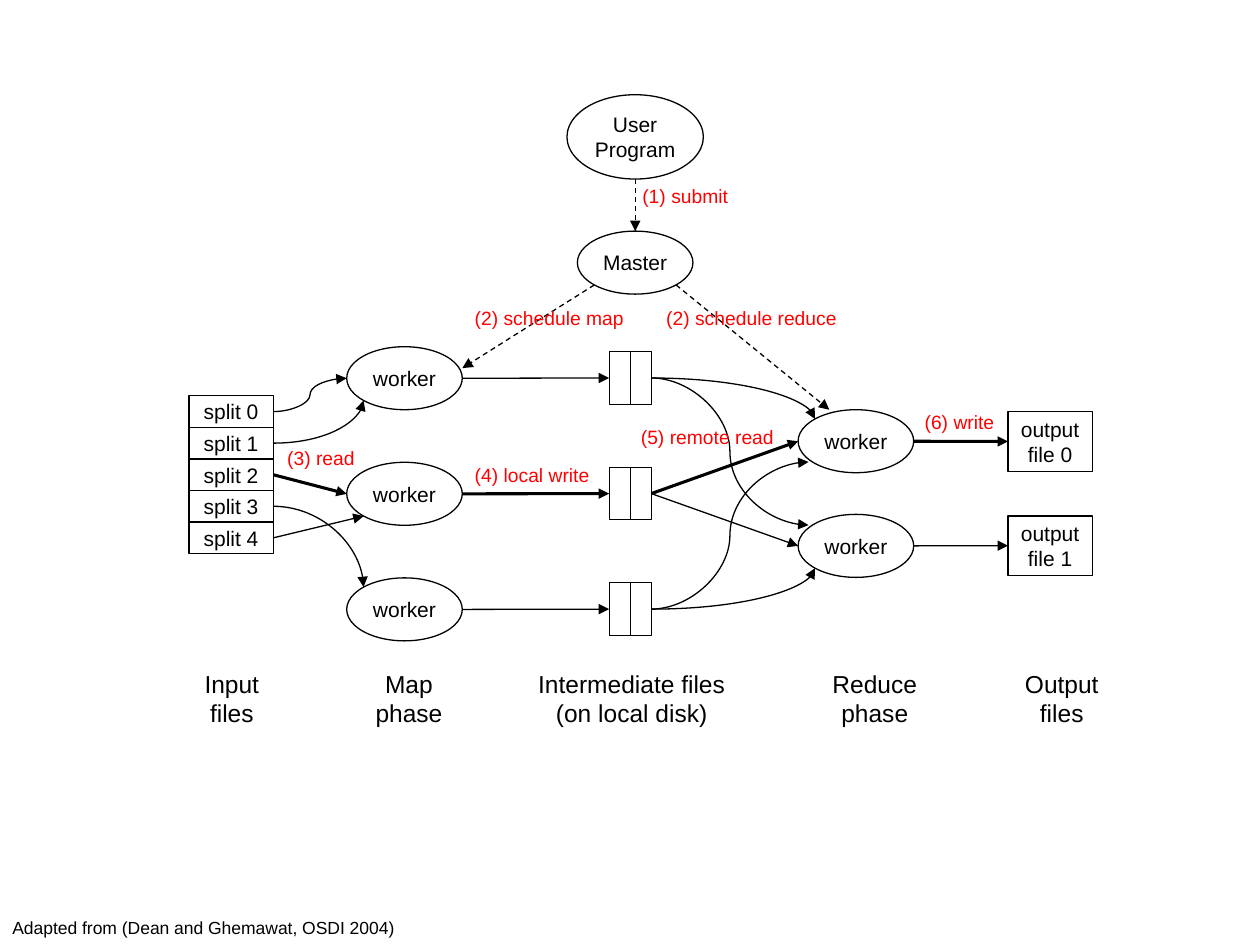
from pptx import Presentation
from pptx.dml.color import RGBColor
from pptx.enum.dml import MSO_LINE
from pptx.enum.shapes import MSO_CONNECTOR, MSO_SHAPE
from pptx.enum.text import MSO_ANCHOR, MSO_AUTO_SIZE, PP_ALIGN
from pptx.oxml.ns import qn
from pptx.util import Cm, Pt
from lxml.etree import SubElement

INK = {"black": "000000", "red": "FF0000"}
OVAL, RECT = MSO_SHAPE.OVAL, MSO_SHAPE.RECTANGLE
SITES = {"top": 0, "left": 1, "bottom": 2, "right": 3}
SPOTS = {
    "top": (0.5, 0), "left": (0, 0.5), "bottom": (0.5, 1), "right": (1, 0.5),
    "top left": (0.146, 0.146), "low left": (0.146, 0.854),
    "low right": (0.854, 0.854), "upper side": (0.09, 0.17),
    "lower side": (0.09, 0.83), "upper right": (1, 0.34), "near top": (0.27, 0),
}


def color(name):
    return RGBColor.from_string(INK[name])


def write(frame, text, size, ink="black", align=PP_ALIGN.CENTER):
    frame.text = text
    for par in frame.paragraphs:
        par.alignment = align
        par.font.name = "Arial"
        par.font.size = Pt(size)
        par.font.color.rgb = color(ink)


def node(slide, kind, box, text=""):
    shape = slide.shapes.add_shape(kind, *map(Cm, box))
    shape.shadow.inherit = False
    shape.fill.background()
    shape.line.color.rgb = color("black")
    shape.line.width = Pt(0.75)
    if text:
        frame = shape.text_frame
        frame.margin_left = frame.margin_right = 0
        frame.margin_top = frame.margin_bottom = 0
        frame.vertical_anchor = MSO_ANCHOR.MIDDLE
        frame.word_wrap = False
        write(frame, text, 12)
    return shape


def label(slide, box, text, size, ink="black", align=PP_ALIGN.LEFT, wrap=False):
    frame = slide.shapes.add_textbox(*map(Cm, box)).text_frame
    frame.word_wrap = wrap
    frame.auto_size = MSO_AUTO_SIZE.SHAPE_TO_FIT_TEXT
    write(frame, text, size, ink, align)


def point(shape, spot):
    across, down = SPOTS[spot]
    return (int(shape.left + across * shape.width),
            int(shape.top + down * shape.height))


def link(slide, start, end, width=0.75, curve=0, dash=False):
    kind = MSO_CONNECTOR.CURVE if curve else MSO_CONNECTOR.STRAIGHT
    line = slide.shapes.add_connector(kind, *point(*start), *point(*end))
    if not curve:
        for (shape, spot), join in ((start, line.begin_connect),
                                    (end, line.end_connect)):
            if shape.auto_shape_type == RECT:
                join(shape, SITES[spot])
    line.line.color.rgb = color("black")
    line.line.width = Pt(width)
    if dash:
        line.line.dash_style = MSO_LINE.DASH
    props = line._element.spPr
    if curve:
        props.find(qn("a:prstGeom")).set("prst", f"curvedConnector{curve}")
    SubElement(props.find(qn("a:ln")), qn("a:tailEnd"), type="triangle")
    SubElement(props, qn("a:effectLst"))


def splits(slide, box, count):
    x, y, w, h = box
    step = h / count
    return [node(slide, RECT, (x, y + i * step, w, step), f"split {i}")
            for i in range(count)]


def workers(slide, box, count, step):
    x, y, w, h = box
    return [node(slide, OVAL, (x, y + i * step, w, h), "worker")
            for i in range(count)]


def buffers(slide, box, count, step):
    x, y, w, h = box
    return [[node(slide, RECT, (x + j * w / 2, y + i * step, w / 2, h))
             for j in range(2)] for i in range(count)]


def outputs(slide, box, count, step):
    x, y, w, h = box
    return [node(slide, RECT, (x, y + i * step, w, h), f"output\nfile {i}")
            for i in range(count)]


def control(slide, box):
    x, y, w, h = box
    user = node(slide, OVAL, (x, y, w, 1.7), "User\nProgram")
    side = 2.33
    master = node(slide, OVAL, (x + (w - side) / 2, y + h - 1.27, side, 1.27),
                  "Master")
    link(slide, (user, "bottom"), (master, "top"), dash=True)
    return master


def steps(slide, box):
    left, top, w, h = box
    for x, y, wide, text in (
            (7.16, 0, 2.26, "(1) submit"),
            (3.78, 2.44, 3.53, "(2) schedule map"),
            (7.64, 2.44, 3.96, "(2) schedule reduce"),
            (0, 5.28, 1.88, "(3) read"),
            (3.78, 5.61, 2.84, "(4) local write"),
            (7.13, 4.85, 3.2, "(5) remote read"),
            (12.85, 4.55, 1.93, "(6) write")):
        label(slide, (left + x, top + y, wide, 0.74), text, 11, "red")


def captions(slide, box):
    left, top, w, h = box
    for x, wide, text in (
            (0, 1.63, "Input\nfiles"),
            (3.46, 1.85, "Map\nphase"),
            (6.73, 4.29, "Intermediate files\n(on local disk)"),
            (12.62, 2.31, "Reduce\nphase"),
            (16.54, 2.01, "Output\nfiles")):
        label(slide, (left + x, top, wide, h), text, 14, align=PP_ALIGN.CENTER)


def flow(slide, master, parts, maps, files, reds, outs):
    bold = 1.75
    link(slide, (parts[0], "right"), (maps[0], "left"), curve=3)
    link(slide, (parts[1], "right"), (maps[0], "low left"), curve=2)
    link(slide, (parts[3], "right"), (maps[2], "top left"), curve=2)
    link(slide, (parts[2], "right"), (maps[1], "left"), bold)
    link(slide, (parts[4], "right"), (maps[1], "low left"))
    for i, (work, pair) in enumerate(zip(maps, files)):
        link(slide, (work, "right"), (pair[0], "left"), bold if i == 1 else 0.75)
    for work, out, width in zip(reds, outs, (bold, 0.75)):
        link(slide, (work, "right"), (out, "left"), width)
        link(slide, (files[1][1], "right"), (work, "left"), width)
    for i, work, spot, curve in (
            (0, 0, "top left", 2), (0, 1, "upper side", 3),
            (2, 0, "lower side", 3), (2, 1, "low left", 2)):
        link(slide, (files[i][1], "right"), (reds[work], spot), curve=curve)
    link(slide, (master, "low left"), (maps[0], "upper right"), dash=True)
    link(slide, (master, "low right"), (reds[0], "near top"), dash=True)


def main():
    deck = Presentation()
    deck.slide_width, deck.slide_height = Cm(25.4), Cm(19.05)
    slide = deck.slides.add_slide(deck.slide_layouts[6])
    parts = splits(slide, (3.81, 7.98, 1.7, 3.18), 5)
    maps = workers(slide, (6.99, 6.99, 2.33, 1.27), 3, 2.33)
    reds = workers(slide, (16.09, 8.26, 2.33, 1.27), 2, 2.11)
    master = control(slide, (11.43, 1.91, 2.75, 4.02))
    outs = outputs(slide, (20.32, 8.3, 1.7, 1.2), 2, 2.1)
    files = buffers(slide, (12.28, 7.09, 0.85, 1.06), 3, 2.33)
    flow(slide, master, parts, maps, files, reds, outs)
    steps(slide, (5.54, 3.6, 14.78, 6.35))
    captions(slide, (3.86, 13.36, 18.55, 1.45))
    label(slide, (0, 18.36, 8.69, 0.69),
          "Adapted from (Dean and Ghemawat, OSDI 2004)", 10, wrap=True)
    deck.save("out.pptx")


if __name__ == "__main__":
    main()
